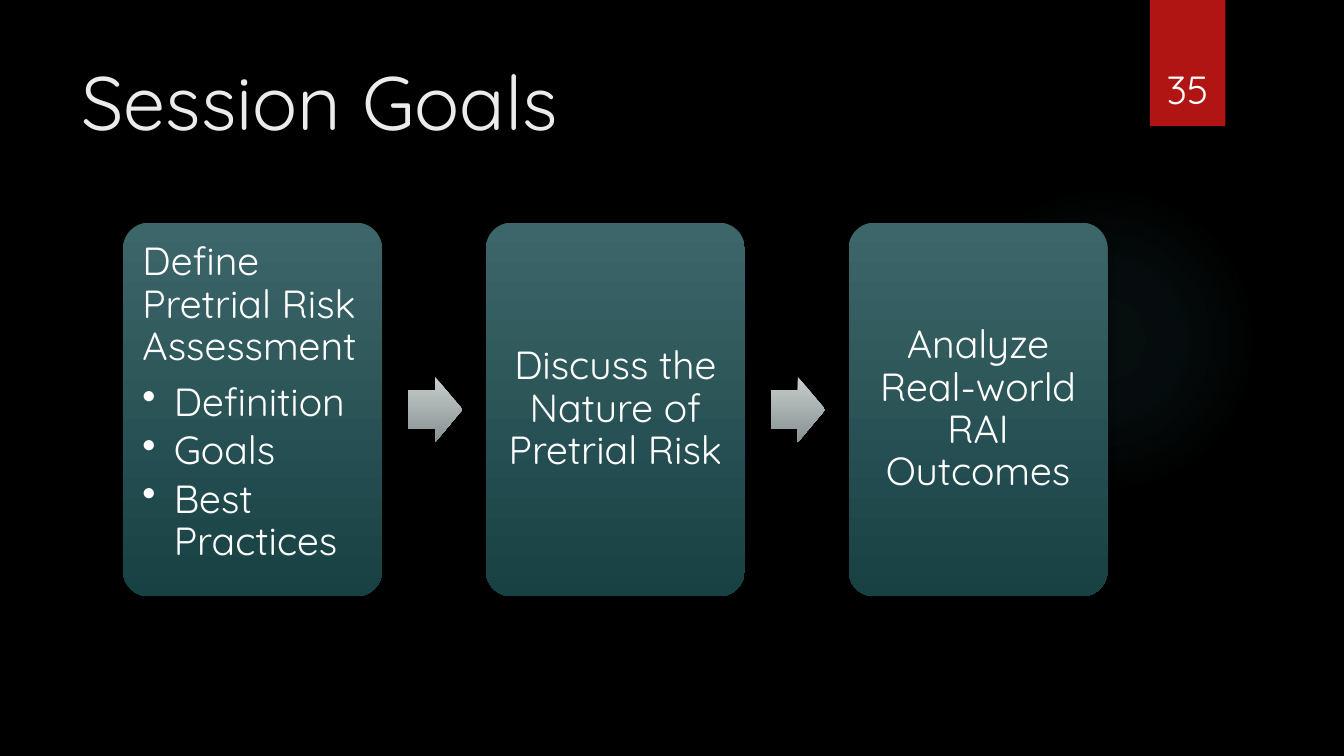
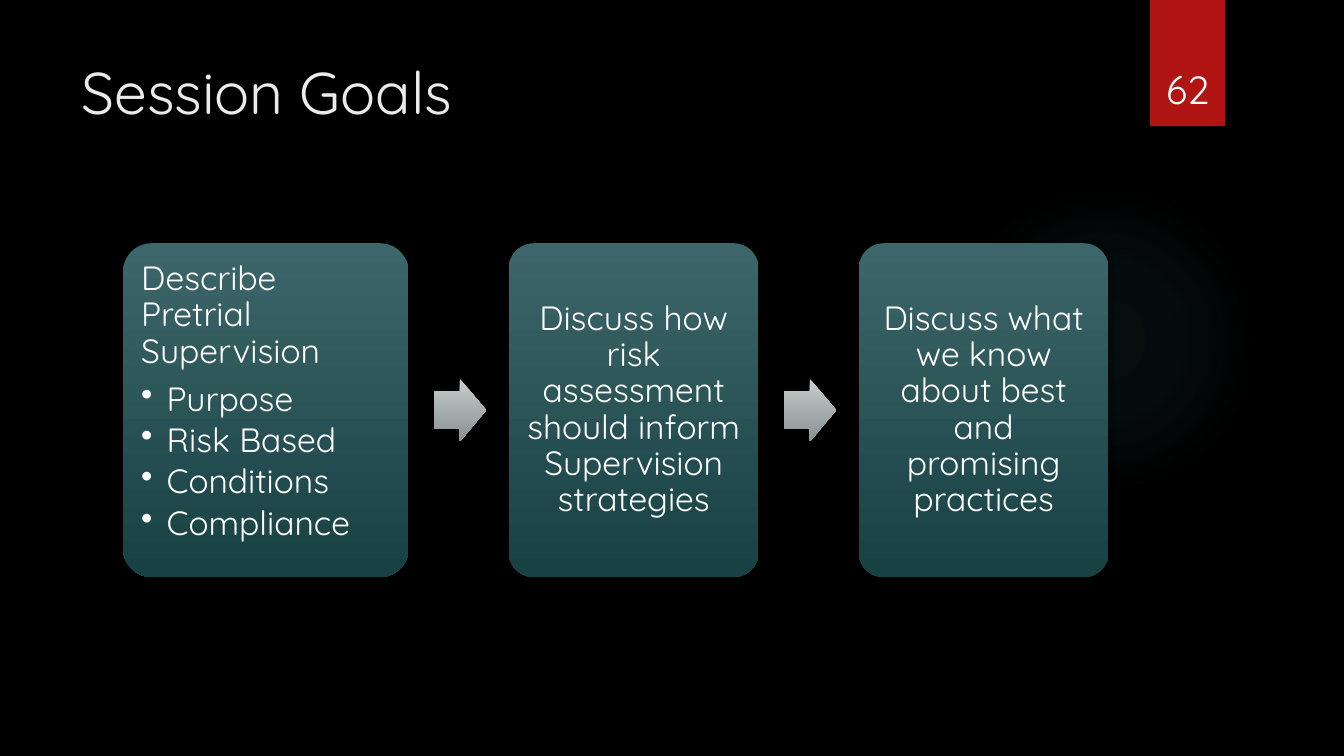
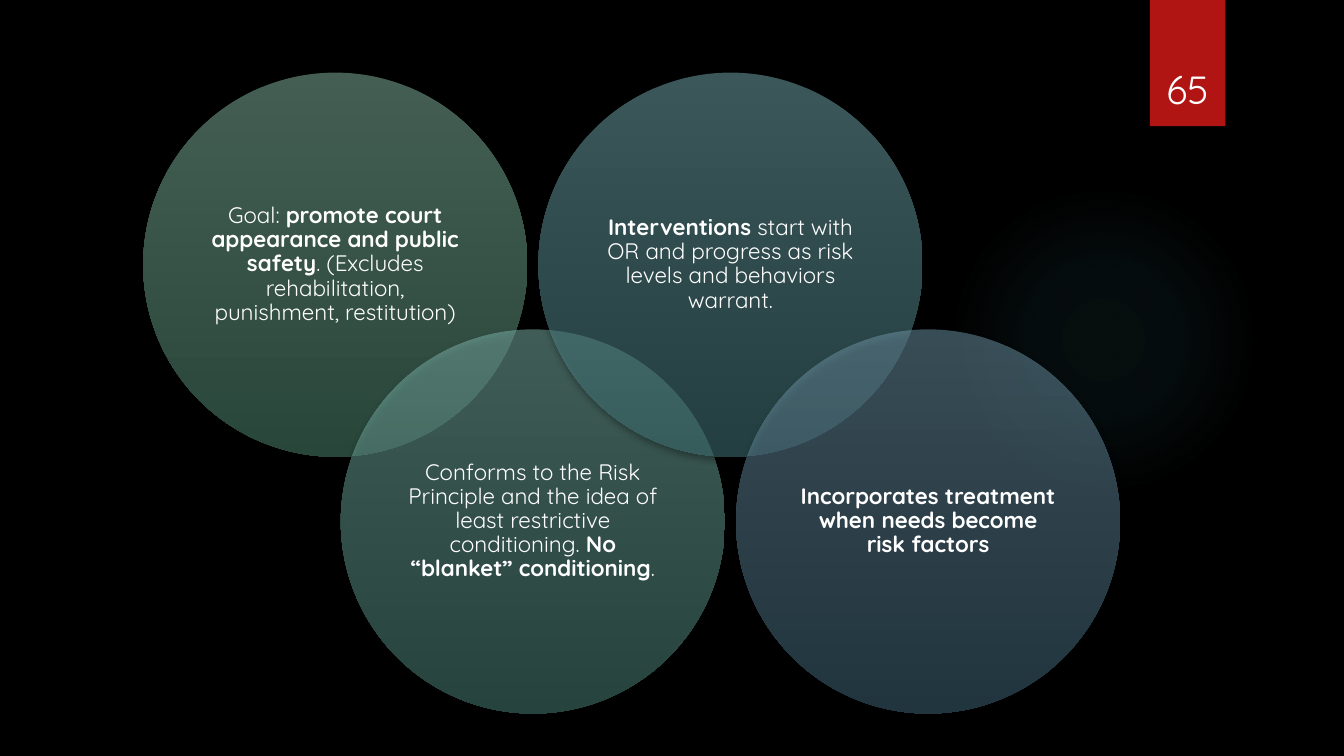
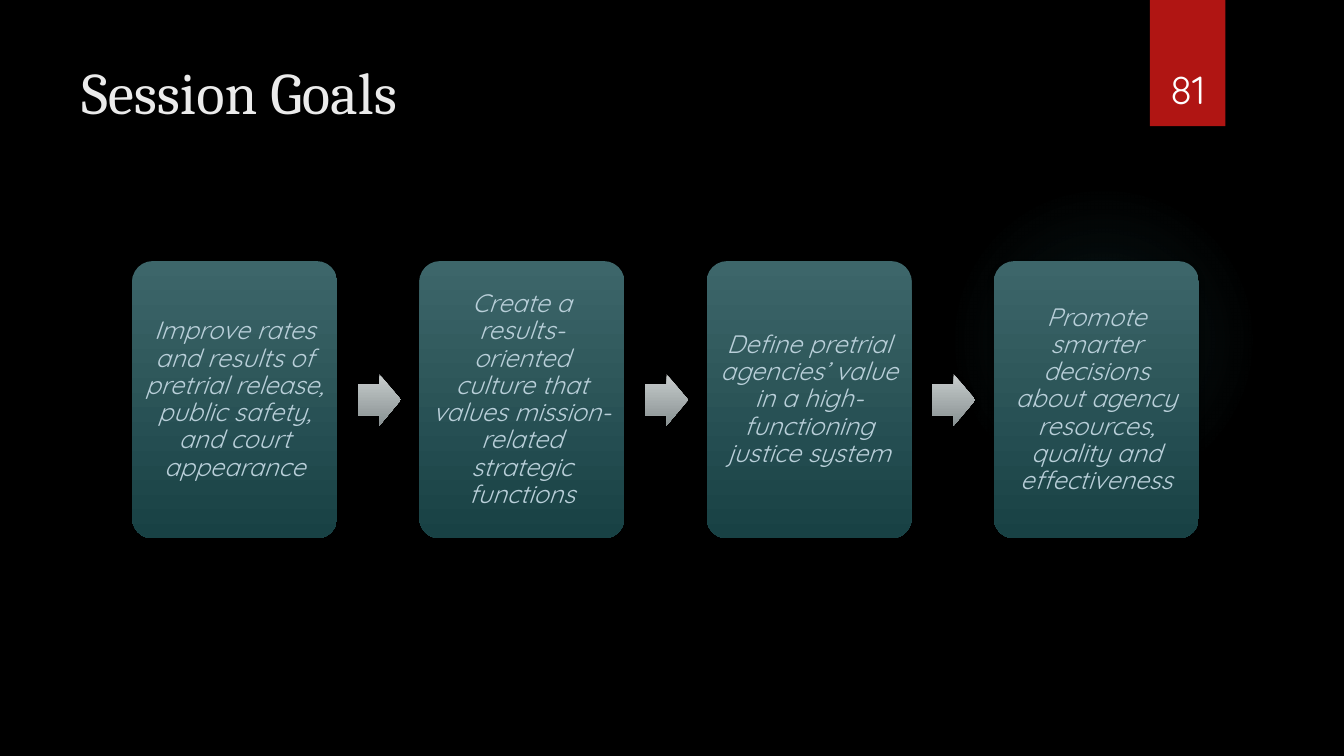
import pptx
import pptx.dml.color
import pptx.enum.shapes
import pptx.enum.text
import pptx.oxml
import pptx.oxml.ns
import pptx.util

Cm = pptx.util.Cm
Pt = pptx.util.Pt
RGBColor = pptx.dml.color.RGBColor
SHAPE = pptx.enum.shapes.MSO_SHAPE
ALIGN = pptx.enum.text.PP_ALIGN
ANCHOR = pptx.enum.text.MSO_ANCHOR

# Shared style
BLACK = RGBColor(0x00, 0x00, 0x00)
WHITE = RGBColor(0xFF, 0xFF, 0xFF)
TITLE_COLOR = RGBColor(0xEB, 0xEB, 0xEB)
PALE_BLUE = RGBColor(0xB9, 0xCF, 0xD9)
RED = RGBColor(0xB0, 0x15, 0x13)
GLOW = RGBColor(0x50, 0xB9, 0xC1)
CARD_COLORS = (RGBColor(0x3D, 0x66, 0x6A), RGBColor(0x18, 0x41, 0x44))
ARROW_COLORS = (RGBColor(0xC8, 0xCD, 0xCD), RGBColor(0x88, 0x91, 0x92))
FONT = "Quicksand"

# Content: each card is a heading and its bullets; lengths are in cm
FLOWS = {
    35: dict(
        title="Session Goals", title_font=FONT, title_size=54,
        left=3.1, top=5.61, widths=[6.53] * 3, height=9.42,
        size=28, color=WHITE, italic=False, inset=0.3, indent=0.79,
        cards=[
            ("Define Pretrial Risk Assessment", ["Definition", "Goals", "Best Practices"]),
            ("Discuss the Nature of Pretrial Risk", []),
            ("Analyze Real-world RAI Outcomes", []),
        ]),
    62: dict(
        title="Session Goals", title_font=FONT, title_size=42,
        left=3.1, top=6.13, widths=[7.2, 6.3, 6.3], height=8.41,
        size=24, color=WHITE, italic=False, inset=0.25, indent=0.64,
        cards=[
            ("Describe Pretrial Supervision",
             ["Purpose", "Risk Based", "Conditions", "Compliance"]),
            ("Discuss how risk assessment should inform Supervision strategies", []),
            ("Discuss what we know about best and promising practices", []),
        ]),
    81: dict(
        title="Session Goals", title_font="Cambria", title_size=42,
        left=3.33, top=6.58, widths=[5.17] * 4, height=6.99,
        size=18, color=PALE_BLUE, italic=True, inset=0.18, indent=0,
        cards=[
            ("Improve rates and results of pretrial release, public safety, "
             "and court appearance", []),
            ("Create a results-oriented culture that values mission-related "
             "strategic functions", []),
            ("Define pretrial agencies’ value in a high-functioning justice system", []),
            ("Promote smarter decisions about agency resources, quality "
             "and effectiveness", []),
        ]),
}

# Circles from left to right: gradient colours, then (text, bold) runs
CIRCLES_NUMBER = 65
CIRCLES = [
    ((RGBColor(0x89, 0xBD, 0xA7), RGBColor(0x53, 0x8C, 0x74)),
     [("Goal: ", False), ("promote court appearance and public safety", True),
      (". (Excludes rehabilitation, punishment, restitution)", False)]),
    ((RGBColor(0x80, 0xB8, 0xAE), RGBColor(0x4E, 0x86, 0x7C)),
     [("Conforms to the Risk Principle and the idea of least restrictive conditioning. ",
       False), ("No “blanket” conditioning", True), (".", False)]),
    ((RGBColor(0x78, 0xAE, 0xB2), RGBColor(0x48, 0x7E, 0x82)),
     [("Interventions", True),
      (" start with OR and progress as risk levels and behaviors warrant.", False)]),
    ((RGBColor(0x71, 0x98, 0xAB), RGBColor(0x43, 0x6A, 0x7C)),
     [("Incorporates treatment when needs become risk factors", True)]),
]
CIRCLE_LEFT, CIRCLE_STEP, CIRCLE_SIZE = 3.61, 4.98, 9.68
CIRCLE_TOPS = (1.83, 8.3)


def add_plain(slide, kind, left, top, width, height):
    """Add a preset shape with no outline and no shadow; lengths in cm."""
    shape = slide.shapes.add_shape(kind, Cm(left), Cm(top), Cm(width), Cm(height))
    shape.shadow.inherit = False
    shape.line.fill.background()
    return shape


def set_gradient(shape, stops, direction='<a:lin ang="5400000" scaled="0"/>'):
    """Fill with (position %, colour, opacity %) stops, top to bottom by default."""
    stop_xml = "".join(
        f'<a:gs pos="{pos * 1000}"><a:srgbClr val="{color}">'
        f'<a:alpha val="{opacity * 1000}"/></a:srgbClr></a:gs>'
        for pos, color, opacity in stops)
    gradient = pptx.oxml.parse_xml(
        f'<a:gradFill {pptx.oxml.ns.nsdecls("a")} rotWithShape="1">'
        f'<a:gsLst>{stop_xml}</a:gsLst>{direction}</a:gradFill>')
    shape.fill.background()
    properties = shape.element.spPr
    properties.replace(properties.find(pptx.oxml.ns.qn("a:noFill")), gradient)


def set_shadow(shape, opacity, blur, distance):
    effects = shape.element.spPr.find(pptx.oxml.ns.qn("a:effectLst"))
    effects.append(pptx.oxml.parse_xml(
        f'<a:outerShdw {pptx.oxml.ns.nsdecls("a")} blurRad="{Pt(blur)}" '
        f'dist="{Pt(distance)}" dir="5400000" rotWithShape="0"><a:srgbClr val="{BLACK}">'
        f'<a:alpha val="{opacity * 1000}"/></a:srgbClr></a:outerShdw>'))


def add_diagram_part(slide, kind, box, colors, opacity=100):
    part = add_plain(slide, kind, *box)
    set_gradient(part, [(0, colors[0], opacity), (100, colors[1], opacity)])
    set_shadow(part, 60, 5, 3)
    return part


def set_frame(shape, inset, anchor):
    frame = shape.text_frame
    frame.word_wrap = True
    frame.vertical_anchor = anchor
    frame.margin_left = frame.margin_right = Cm(inset)
    frame.margin_top = frame.margin_bottom = Cm(inset)
    return frame


def set_font(paragraph, size, color, name=FONT, italic=False):
    font = paragraph.font
    font.name, font.size, font.italic = name, Pt(size), italic
    font.color.rgb = color


def set_spacing(paragraph, size, after):
    paragraph.line_spacing = 0.9
    paragraph.space_after = Pt(round(after * size, 1))


def add_bullet(paragraph, indent):
    properties = paragraph._p.get_or_add_pPr()
    properties.set("marL", str(Cm(indent)))
    properties.set("indent", str(-Cm(indent)))
    properties.append(pptx.oxml.parse_xml(
        f'<a:buChar {pptx.oxml.ns.nsdecls("a")} char="•"/>'))


def add_base_slide(prs, number):
    """Black slide with the faint glow and the red page-number band."""
    slide = prs.slides.add_slide(prs.slide_layouts[6])
    slide.background.fill.solid()
    slide.background.fill.fore_color.rgb = BLACK

    glow = add_plain(slide, SHAPE.OVAL, 23.9, 4.65, 7.82, 7.82)
    set_gradient(glow, [(0, GLOW, 7), (36, GLOW, 6), (69, GLOW, 0)],
                 '<a:path path="circle"><a:fillToRect l="50000" t="50000" '
                 'r="50000" b="50000"/></a:path>')

    band = add_plain(slide, SHAPE.RECTANGLE, 28.98, 0, 1.9, 3.18)
    band.fill.solid()
    band.fill.fore_color.rgb = RED
    set_shadow(band, 45, 3, 2)
    frame = set_frame(band, 0, ANCHOR.BOTTOM)
    frame.margin_bottom = Cm(0.36)
    page = frame.paragraphs[0]
    page.text = str(number)
    page.alignment = ALIGN.CENTER
    set_font(page, 28, WHITE)
    return slide


def add_title(slide, text, font, size):
    box = slide.shapes.add_textbox(Cm(1.8), Cm(1.27), Cm(26.14), Cm(3.89))
    box.text_frame.word_wrap = True
    title = box.text_frame.paragraphs[0]
    title.text = text
    set_font(title, size, TITLE_COLOR, font)


def fill_card(card, heading, bullets, flow):
    frame = set_frame(card, flow["inset"], ANCHOR.TOP if bullets else ANCHOR.MIDDLE)
    for index, text in enumerate([heading] + bullets):
        paragraph = frame.add_paragraph() if index else frame.paragraphs[0]
        paragraph.text = text
        paragraph.alignment = ALIGN.LEFT if bullets else ALIGN.CENTER
        if index:
            add_bullet(paragraph, flow["indent"])
        set_spacing(paragraph, flow["size"], 0.15 if index else 0.35)
        set_font(paragraph, flow["size"], flow["color"], italic=flow["italic"])


def build_flow(prs, number, flow):
    slide = add_base_slide(prs, number)
    add_title(slide, flow["title"], flow["title_font"], flow["title_size"])
    # Gaps and arrows scale with the regular card width
    unit = flow["widths"][-1]
    arrow_width, arrow_height = 0.21 * unit, 0.25 * unit
    arrow_top = flow["top"] + (flow["height"] - arrow_height) / 2
    left = flow["left"]
    for index, (heading, bullets) in enumerate(flow["cards"]):
        if index:
            arrow = add_diagram_part(
                slide, SHAPE.RIGHT_ARROW,
                (left - 0.3 * unit, arrow_top, arrow_width, arrow_height), ARROW_COLORS)
            arrow.adjustments[0] = 0.6
            arrow.adjustments[1] = 0.5
        width = flow["widths"][index]
        card = add_diagram_part(slide, SHAPE.ROUNDED_RECTANGLE,
                                (left, flow["top"], width, flow["height"]), CARD_COLORS)
        card.adjustments[0] = 0.1
        fill_card(card, heading, bullets, flow)
        left += width + 0.4 * unit


def build_circles(prs):
    slide = add_base_slide(prs, CIRCLES_NUMBER)
    for index, (colors, runs) in enumerate(CIRCLES):
        box = (CIRCLE_LEFT + index * CIRCLE_STEP, CIRCLE_TOPS[index % 2],
               CIRCLE_SIZE, CIRCLE_SIZE)
        circle = add_diagram_part(slide, SHAPE.OVAL, box, colors, opacity=50)
        paragraph = set_frame(circle, 0.18, ANCHOR.MIDDLE).paragraphs[0]
        paragraph.alignment = ALIGN.CENTER
        set_spacing(paragraph, 16, 0.35)
        set_font(paragraph, 16, WHITE)
        for text, bold in runs:
            run = paragraph.add_run()
            run.text = text
            run.font.bold = bold


def main():
    prs = pptx.Presentation()
    prs.slide_width, prs.slide_height = Cm(33.87), Cm(19.05)
    for number in sorted([*FLOWS, CIRCLES_NUMBER]):
        if number == CIRCLES_NUMBER:
            build_circles(prs)
        else:
            build_flow(prs, number, FLOWS[number])
    prs.save("out.pptx")


if __name__ == "__main__":
    main()
